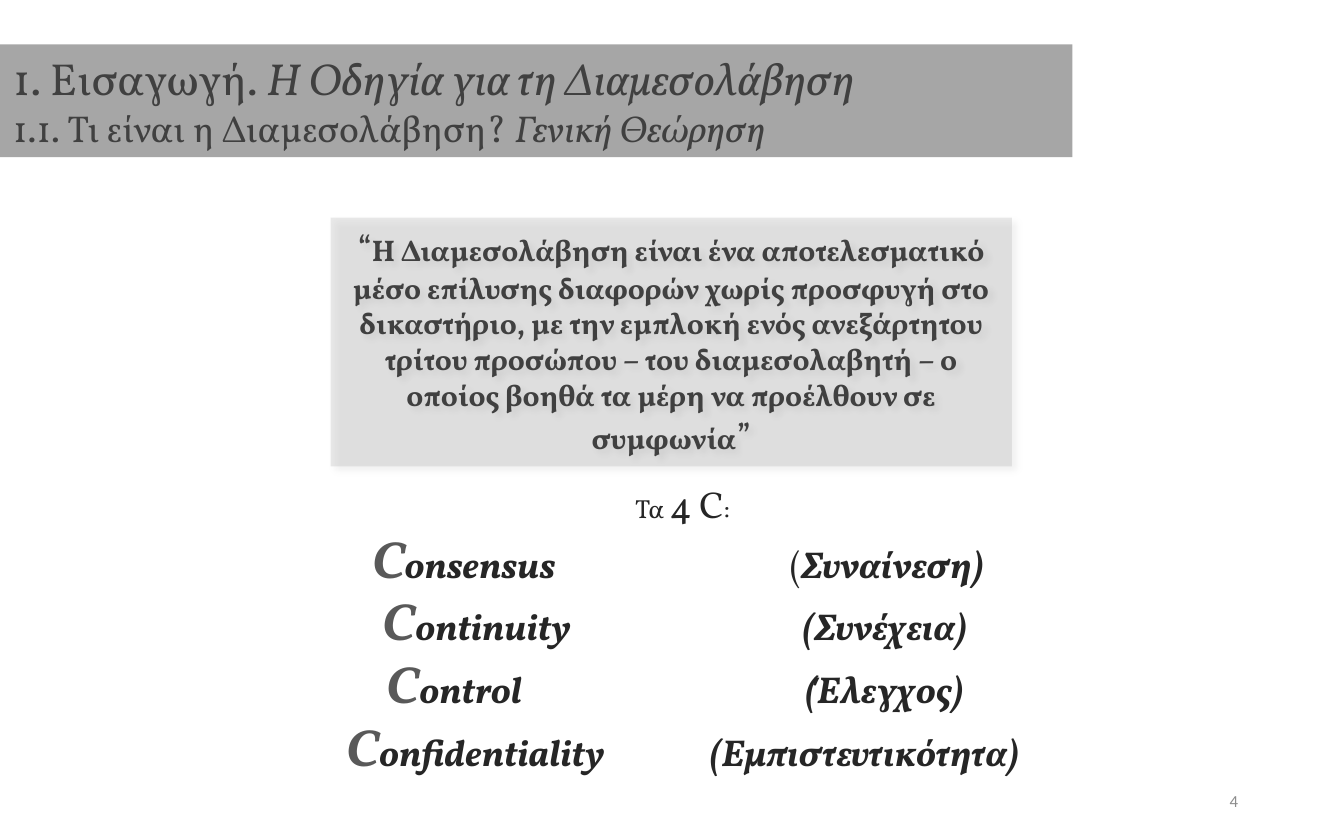
"""Build the slide that defines mediation and lists its four Cs."""
from lxml import etree
from pptx import Presentation
from pptx.dml.color import RGBColor
from pptx.enum.shapes import MSO_SHAPE
from pptx.enum.text import MSO_ANCHOR, PP_ALIGN
from pptx.oxml import parse_xml
from pptx.oxml.ns import qn
from pptx.util import Inches, Pt

RECT = MSO_SHAPE.RECTANGLE
TOP, MIDDLE = MSO_ANCHOR.TOP, MSO_ANCHOR.MIDDLE
LEFT, CENTER, RIGHT = PP_ALIGN.LEFT, PP_ALIGN.CENTER, PP_ALIGN.RIGHT
FONT, NUMBER_FONT = "Vollkorn", "Calibri"
DARK, INK, GREY, PALE = "404040", "262626", "595959", "8C8C8C"

TITLE = [
    [("1. Εισαγωγή. ", 24, DARK, ""), ("Η Οδηγία για τη Διαμεσολάβηση", 24, DARK, "i")],
    [("1.1. Τι είναι η Διαμεσολάβηση? ", 20, DARK, ""), ("Γενική Θεώρηση", 20, DARK, "i")],
]
QUOTE = [[
    ("“", 20, DARK, ""),
    ("Η Διαμεσολάβηση είναι ένα αποτελεσματικό μέσο επίλυσης διαφορών χωρίς "
     "προσφυγή στο δικαστήριο, με την εμπλοκή ενός ανεξάρτητου τρίτου προσώπου – "
     "του διαμεσολαβητή – ο οποίος βοηθά τα μέρη να προέλθουν σε συμφωνία", 16, DARK, "b"),
    ("”", 20, DARK, ""),
]]
HEADING = [("Τα ", 14, INK, ""), ("4 C", 20, INK, ""), (":", 14, INK, "")]
TERMS = [
    ("onsensus", "(", "", "Συναίνεση)", 0.97, 4.08),
    ("ontinuity", "(", "bi", "Συνέχεια)", 1.05, 4.17),
    ("ontrol", "(", "bi", "Έλεγχος)", 1.08, 4.19),
    ("onfidentiality", "(", "bi", "Εμπιστευτικότητα)", 0.78, 3.48),
]
SHADOW = (
    '<a:effectLst xmlns:a="http://schemas.openxmlformats.org/drawingml/2006/main">'
    '<a:outerShdw blurRad="50800" dist="38100" dir="2700000" algn="tl" rotWithShape="0">'
    '<a:srgbClr val="000000"><a:alpha val="17000"/></a:srgbClr>'
    '</a:outerShdw></a:effectLst>'
)


def rgb(value):
    return RGBColor.from_string(value)


def write(sp, paragraphs, align, anchor=TOP, font=FONT):
    tf = sp.text_frame
    tf.word_wrap = True
    tf.vertical_anchor = anchor
    for i, runs in enumerate(paragraphs):
        p = tf.add_paragraph() if i else tf.paragraphs[0]
        p.alignment = align
        for text, size, color, style in runs:
            r = p.add_run()
            r.text = text
            r.font.name = font
            r.font.size = Pt(size)
            r.font.color.rgb = rgb(color)
            r.font.bold = "b" in style
            r.font.italic = "i" in style
    return tf


def add_panel(s, box, color):
    sp = s.shapes.add_shape(RECT, *map(Inches, box))
    sp.shadow.inherit = False
    sp.fill.solid()
    sp.fill.fore_color.rgb = rgb(color)
    sp.line.fill.background()
    return sp


def add_text(s, box):
    return s.shapes.add_textbox(*map(Inches, box))


def set_tabs(p, stops):
    tabs = etree.SubElement(p._p.get_or_add_pPr(), qn("a:tabLst"))
    for stop in stops:
        etree.SubElement(tabs, qn("a:tab"), pos=str(Inches(stop)), algn="l")


def soften(sp, opacity):
    props = sp._element.spPr
    color = props.find(qn("a:solidFill")).find(qn("a:srgbClr"))
    etree.SubElement(color, qn("a:alpha"), val=str(opacity * 1000))
    props.replace(props.find(qn("a:effectLst")), parse_xml(SHADOW))


def term_runs(word, bracket, bracket_style, greek):
    return [
        ("\tC", 28, GREY, "bi"),
        (word + "\t", 20, INK, "bi"),
        (bracket, 20, INK, bracket_style),
        (greek, 20, INK, "bi"),
    ]


def main():
    prs = Presentation()
    prs.slide_width, prs.slide_height = Inches(10), Inches(6.25)
    s = prs.slides.add_slide(prs.slide_layouts[6])

    write(add_panel(s, (0, 0.33, 7.98, 0.84), "A6A6A6"), TITLE, LEFT)

    quote = add_panel(s, (2.46, 1.62, 5.07, 1.85), "BFBFBF")
    soften(quote, 35)
    write(quote, QUOTE, CENTER)

    rows = [term_runs(*term[:4]) for term in TERMS]
    tf = write(add_text(s, (1.7, 3.53, 6.76, 2.66)), [HEADING] + rows, LEFT)
    tf.paragraphs[0].alignment = CENTER
    for p, term in zip(tf.paragraphs[1:], TERMS):
        set_tabs(p, term[4:])

    number = add_text(s, (7.06, 5.79, 2.25, 0.33))
    write(number, [[("4", 9, PALE, "")]], RIGHT, MIDDLE, NUMBER_FONT)
    prs.save("out.pptx")


if __name__ == "__main__":
    main()
